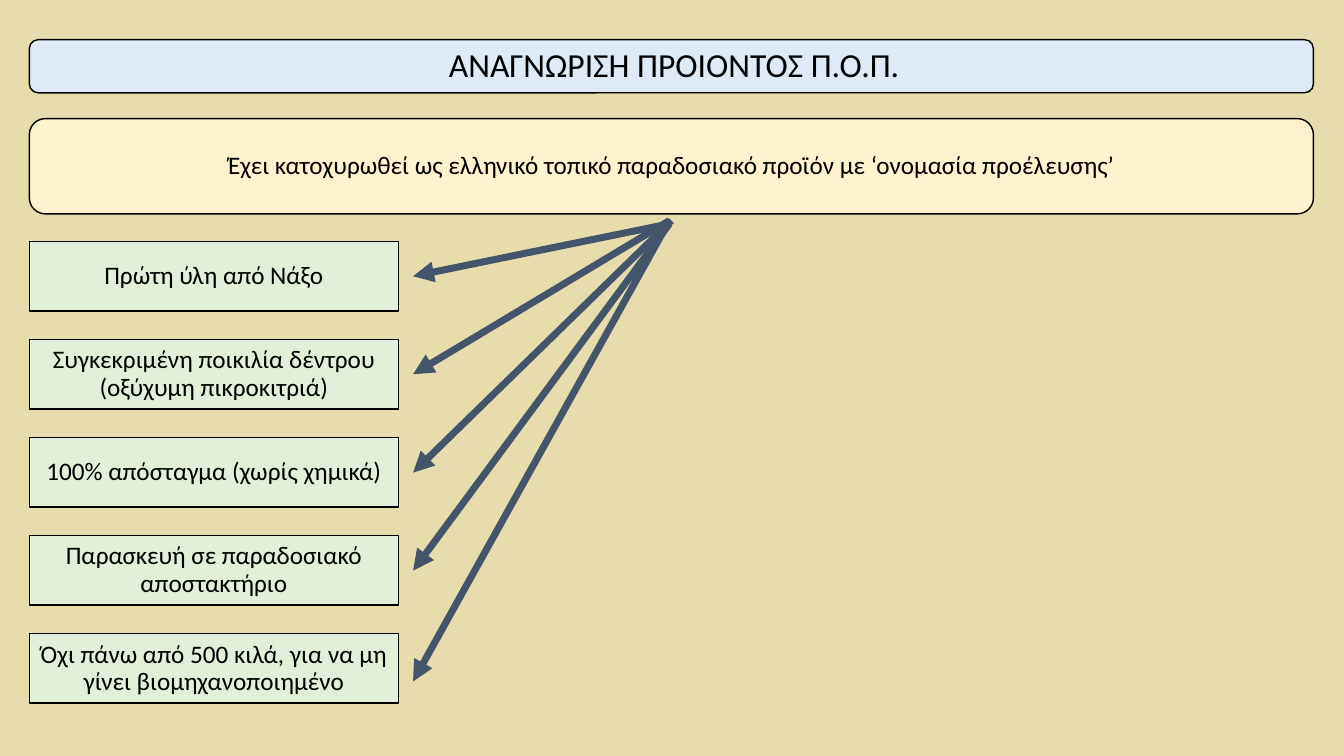
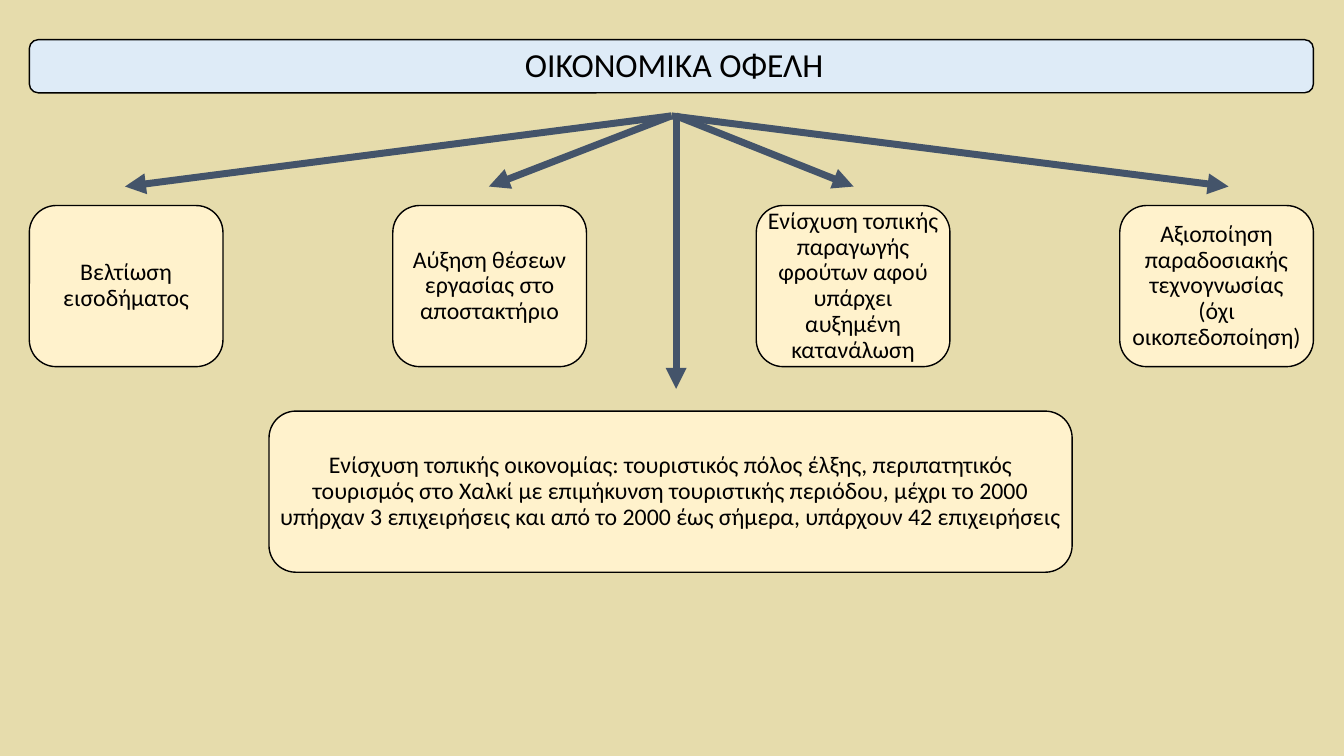
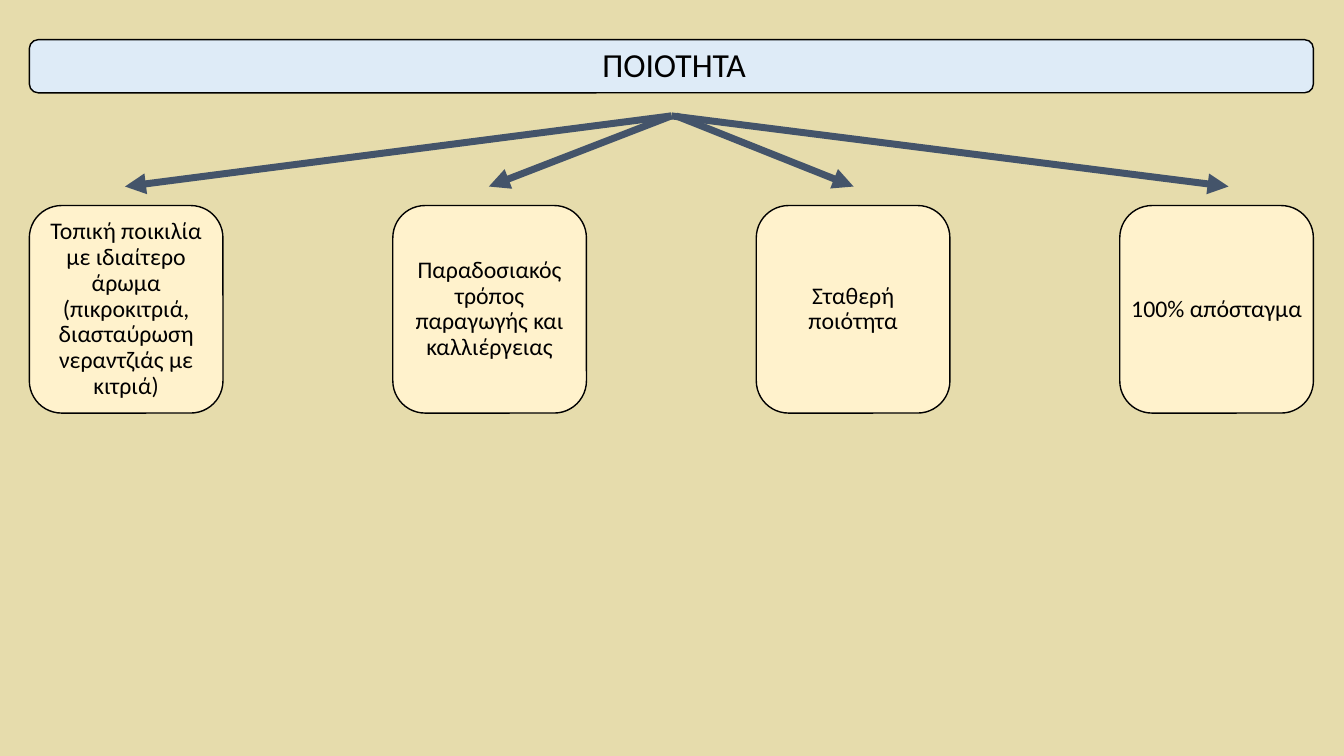
from dataclasses import dataclass

from lxml import etree
from pptx import Presentation
from pptx import util as u
from pptx.dml.color import RGBColor
from pptx.enum import shapes, text
from pptx.oxml.ns import qn

# Shared look, lengths in centimetres
SAND, SKY, CREAM, MINT = "E6DCAC", "DEEBF7", "FFF2CC", "E2F0D9"
INK, SLATE = "000000", "44546A"
FONT = "Calibri"
LEFT, WIDTH = 0.74, 32.36
CORNER = 1 / 6  # corner radius of a rounded box, share of its shorter side
ROUND = shapes.MSO_SHAPE.ROUNDED_RECTANGLE
RECT = shapes.MSO_SHAPE.RECTANGLE

# Rows of slide 1 and columns of slides 2 and 3
ROW_TOP, ROW_HEIGHT, ROW_PITCH = 6.09, 1.75, 2.47
COLUMN_TOP, COLUMN_WIDTH = 5.18, 4.88


@dataclass(frozen=True)
class Box:
    left: float
    top: float
    width: float
    height: float
    fill: str
    words: str = ""
    size: float = 17
    kind: int = ROUND


@dataclass(frozen=True)
class Arrow:
    x1: float
    y1: float
    x2: float
    y2: float


FAN = [
    Arrow(16.92, 2.92, 3.15, 4.7),
    Arrow(16.92, 2.92, 30.96, 4.7),
    Arrow(16.92, 2.92, 12.32, 4.7),
    Arrow(17.04, 2.92, 21.51, 4.7),
]


def colour(code: str) -> RGBColor:
    return RGBColor.from_string(code)


def apply(target, values: dict) -> None:
    for name, value in values.items():
        setattr(target, name, value)


def write(frame, words: str, size: float, frame_format: dict) -> None:
    apply(frame, {"word_wrap": True, "auto_size": text.MSO_AUTO_SIZE.NONE, **frame_format})
    para = frame.paragraphs[0]
    apply(para, {"alignment": text.PP_ALIGN.CENTER, "line_spacing": 0.9, "space_before": u.Pt(0)})
    span = para.add_run()
    span.text = words
    apply(span.font, {"name": FONT, "size": u.Pt(size)})
    span.font.color.rgb = colour(INK)


def draw_box(page, box: Box):
    shape = page.shapes.add_shape(
        box.kind, *map(u.Cm, (box.left, box.top, box.width, box.height)))
    shape.shadow.inherit = False
    shape.fill.solid()
    shape.fill.fore_color.rgb = colour(box.fill)
    shape.line.color.rgb = colour(INK)
    shape.line.width = u.Pt(1)
    # Rounded corners already push the text inwards
    inset = 0.29 * CORNER * min(box.width, box.height) if box.kind == ROUND else 0
    side, edge = u.Cm(max(0.25 - inset, 0)), u.Cm(max(0.13 - inset, 0))
    if box.words:
        write(shape.text_frame, box.words, box.size, {
            "margin_left": side, "margin_right": side,
            "margin_top": edge, "margin_bottom": edge,
            "vertical_anchor": text.MSO_ANCHOR.MIDDLE})
    return shape


def draw_arrow(page, arrow: Arrow) -> None:
    line = page.shapes.add_connector(
        shapes.MSO_CONNECTOR.STRAIGHT,
        *map(u.Cm, (arrow.x1, arrow.y1, arrow.x2, arrow.y2)))
    line.line.color.rgb = colour(SLATE)
    line.line.width = u.Pt(5)
    etree.SubElement(line.line._get_or_add_ln(), qn("a:tailEnd"), type="triangle")
    etree.SubElement(line.element.spPr, qn("a:effectLst"))


def columns(labels: list[str], height: float) -> list[Box]:
    pitch = (WIDTH - COLUMN_WIDTH) / (len(labels) - 1)
    return [Box(LEFT + i * pitch, COLUMN_TOP, COLUMN_WIDTH, height, CREAM, label)
            for i, label in enumerate(labels)]


def add_page(deck, heading: str, boxes: list[Box], arrows: list[Arrow]) -> None:
    page = deck.slides.add_slide(deck.slide_layouts.get_by_name("Title Only"))
    title = page.shapes.title
    apply(title, {"left": u.Cm(1.32), "top": u.Cm(1.09),
                  "width": u.Cm(31.34), "height": u.Cm(1.24)})
    write(title.text_frame, heading, 24, {"vertical_anchor": text.MSO_ANCHOR.TOP})
    # The band lies behind the title
    band = draw_box(page, Box(LEFT, 1, WIDTH, 1.34, SKY))
    title.element.addprevious(band.element)
    for box in boxes:
        draw_box(page, box)
    for arrow in arrows:
        draw_arrow(page, arrow)


def main() -> None:
    deck = Presentation()
    deck.slide_width, deck.slide_height = u.Cm(33.87), u.Cm(19.05)
    background = deck.slide_master.background.fill
    background.solid()
    background.fore_color.rgb = colour(SAND)

    # Slide 1: statement and its conditions
    conditions = [
        "Πρώτη ύλη από Νάξο",
        "Συγκεκριμένη ποικιλία δέντρου (οξύχυμη πικροκιτριά)",
        "100% απόσταγμα (χωρίς χημικά)",
        "Παρασκευή σε παραδοσιακό αποστακτήριο",
        "Όχι πάνω από 500 κιλά, για να μη γίνει βιομηχανοποιημένο",
    ]
    statement = Box(
        LEFT, 2.99, WIDTH, 2.4, CREAM,
        "Έχει κατοχυρωθεί ως ελληνικό τοπικό παραδοσιακό προϊόν με ‘ονομασία προέλευσης’", 18)
    rows = [Box(LEFT, ROW_TOP + i * ROW_PITCH, 9.3, ROW_HEIGHT, MINT, label, 18, RECT)
            for i, label in enumerate(conditions)]
    starts = [(16.87, 5.64), (16.87, 5.56), (16.92, 5.56), (16.87, 5.64), (16.87, 5.56)]
    ends = [6.96, 9.43, 11.91, 14.38, 17.17]
    add_page(deck, "ΑΝΑΓΝΩΡΙΣΗ ΠΡΟΙΟΝΤΟΣ Π.Ο.Π.", [statement, *rows],
             [Arrow(x, y, 10.41, end) for (x, y), end in zip(starts, ends)])

    # Slide 2: economic benefits
    benefits = columns([
        "Βελτίωση εισοδήματος",
        "Αύξηση θέσεων εργασίας στο αποστακτήριο",
        "Ενίσχυση τοπικής παραγωγής φρούτων αφού υπάρχει αυξημένη κατανάλωση",
        "Αξιοποίηση παραδοσιακής τεχνογνωσίας (όχι οικοπεδοποίηση)",
    ], 4.06)
    economy = Box(
        6.78, 10.36, 20.24, 4.06, CREAM,
        "Ενίσχυση τοπικής οικονομίας: τουριστικός πόλος έλξης, περιπατητικός "
        "τουρισμός στο Χαλκί με επιμήκυνση τουριστικής περιόδου, μέχρι το 2000 "
        "υπήρχαν 3 επιχειρήσεις και από το 2000 έως σήμερα, υπάρχουν 42 επιχειρήσεις")
    add_page(deck, "ΟΙΚΟΝΟΜΙΚΑ ΟΦΕΛΗ", [*benefits, economy],
             [*FAN, Arrow(17.04, 2.92, 17.04, 9.8)])

    # Slide 3: quality
    qualities = columns([
        "Τοπική ποικιλία με ιδιαίτερο άρωμα (πικροκιτριά, διασταύρωση νεραντζιάς με κιτριά)",
        "Παραδοσιακός τρόπος παραγωγής και καλλιέργειας",
        "Σταθερή ποιότητα",
        "100% απόσταγμα",
    ], 5.23)
    add_page(deck, "ΠΟΙΟΤΗΤΑ", qualities, FAN)

    deck.save("out.pptx")


if __name__ == "__main__":
    main()
